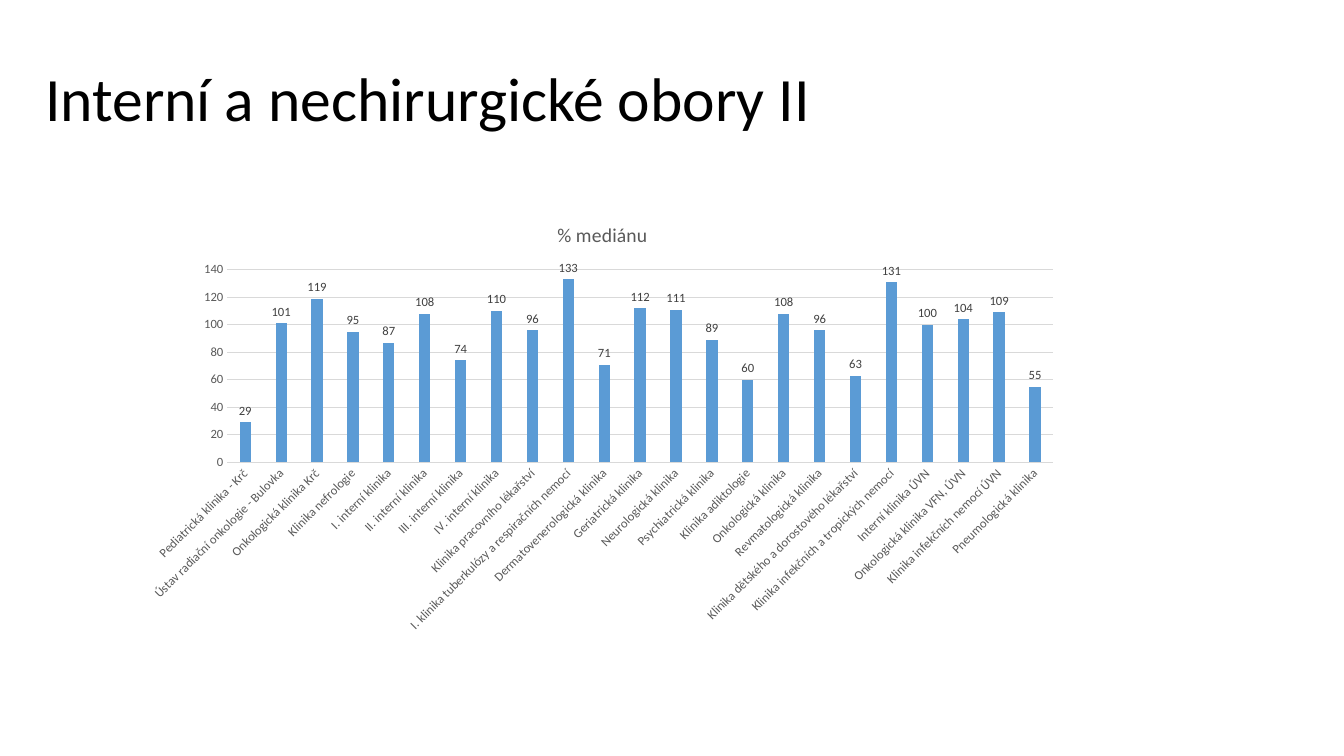
from pptx import Presentation, util as u
from pptx.chart.data import CategoryChartData
from pptx.dml.color import RGBColor
from pptx.enum import chart as ch, text

PX = 9144  # 100 px to the inch


def px(*lengths):
    return [u.Emu(n * PX) for n in lengths]


def style(font, size, color):
    font.name, font.size, font.bold = "Calibri", u.Pt(size), False
    font.color.rgb = RGBColor.from_string(color)


prs = Presentation()
prs.slide_width, prs.slide_height = px(1333, 750)
s = prs.slides.add_slide(prs.slide_layouts[6])

# Title
tf = s.shapes.add_textbox(*px(35, 28, 1150, 145)).text_frame
tf.word_wrap = True
tf.vertical_anchor = text.MSO_ANCHOR.MIDDLE
p = tf.paragraphs[0]
p.line_spacing = 0.9
r = p.add_run()
r.text = "Interní a nechirurgické obory II"
style(r.font, 44, "000000")

# Median share of each clinic
clinics = [
    ("Pediatrická klinika - Krč", 29),
    ("Ústav radiační onkologie - Bulovka", 101),
    ("Onkologická klinika Krč", 119),
    ("Klinika nefrologie", 95),
    ("I. interní klinika", 87),
    ("II. interní klinika", 108),
    ("III. interní klinika", 74),
    ("IV. interní klinika", 110),
    ("Klinika pracovního lékařství", 96),
    ("I. klinika tuberkulózy a respiračních nemocí", 133),
    ("Dermatovenerologická klinika", 71),
    ("Geriatrická klinika", 112),
    ("Neurologická klinika", 111),
    ("Psychiatrická klinika", 89),
    ("Klinika adiktologie", 60),
    ("Onkologická klinika", 108),
    ("Revmatologická klinika", 96),
    ("Klinika dětského a dorostového lékařství", 63),
    ("Klinika infekčních a tropických nemocí", 131),
    ("Interní klinika ÚVN", 100),
    ("Onkologická klinika VFN, ÚVN", 104),
    ("Klinika infekčních nemocí ÚVN", 109),
    ("Pneumologická klinika", 55),
]
data = CategoryChartData(number_format="#,##0")
data.categories = [name for name, _ in clinics]
data.add_series("% mediánu", [value for _, value in clinics])

# Chart and its title
chart = s.shapes.add_chart(
    ch.XL_CHART_TYPE.COLUMN_CLUSTERED, *px(132, 202, 931, 434), data).chart
style(chart.font, 10, "000000")
chart.has_legend = False
chart.has_title = True
r = chart.chart_title.text_frame.paragraphs[0].add_run()
r.text = "% mediánu"
style(r.font, 14, "595959")
chart.chart_title.include_in_layout = False

# Axes
cat, val = chart.category_axis, chart.value_axis
for axis in (cat, val):
    axis.major_tick_mark = axis.minor_tick_mark = ch.XL_TICK_MARK.NONE
    style(axis.tick_labels.font, 9, "595959")
val.minimum_scale, val.maximum_scale, val.major_unit = 0, 140, 20
val.has_major_gridlines = True
val.format.line.fill.background()
for line in (cat.format.line, val.major_gridlines.format.line):
    line.color.rgb = RGBColor.from_string("D9D9D9")
    line.width = u.Pt(0.75)

# Category names slant upwards by 45 degrees
body = cat._element.find(".//{*}txPr/{*}bodyPr")
body.set("rot", str(-45 * 60000))
body.set("vert", "horz")

# Columns and value labels
plot = chart.plots[0]
plot.gap_width, plot.overlap = 219, -27
plot.vary_by_categories = False
columns = plot.series[0]
columns.format.fill.solid()
columns.format.fill.fore_color.rgb = RGBColor.from_string("5B9BD5")
labels = columns.data_labels
labels.show_value = True
labels.number_format, labels.number_format_is_linked = "#,##0", False
labels.position = ch.XL_LABEL_POSITION.OUTSIDE_END
style(labels.font, 9, "404040")

prs.save("out.pptx")
